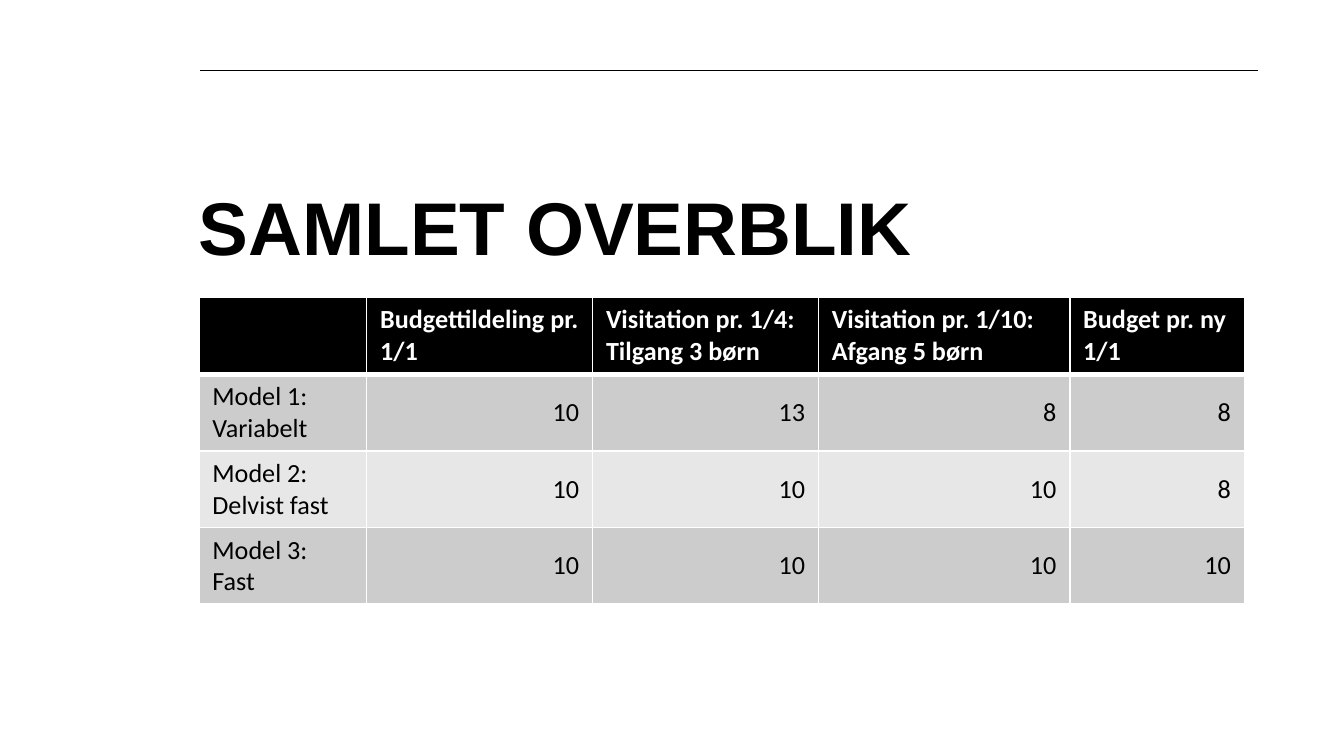
from lxml.etree import SubElement
from pptx import Presentation
from pptx.dml.color import RGBColor
from pptx.enum.shapes import MSO_CONNECTOR
from pptx.enum.text import MSO_ANCHOR, PP_ALIGN
from pptx.oxml.ns import qn
from pptx.util import Cm, Pt

TITLE = "SAMLET OVERBLIK"
HEADER = [
    [],
    ["Budgettildeling pr. 1/1"],
    ["Visitation pr. 1/4:", "Tilgang 3 børn"],
    ["Visitation pr. 1/10:", "Afgang 5 børn"],
    ["Budget pr. ny 1/1"],
]
MODELS = [
    ("Model 1: Variabelt", 10, 13, 8, 8),
    ("Model 2: Delvist fast", 10, 10, 10, 8),
    ("Model 3: Fast", 10, 10, 10, 10),
]
COL_WIDTHS = [3.17, 4.27, 4.27, 4.75, 3.3]
ROW_HEIGHT = 1.45
LEFT, TABLE_TOP = 3.76, 5.62
BLACK, WHITE = "000000", "FFFFFF"
BANDS = ["CCCCCC", "E7E7E7"]


def color(value):
    return RGBColor.from_string(value)


def add_run(p, text, font, size, value, bold):
    r = p.add_run()
    r.text = text
    r.font.name, r.font.size, r.font.bold = font, Pt(size), bold
    r.font.color.rgb = color(value)


def set_borders(cell, top, bottom):
    """White cell borders; top and bottom are widths in points."""
    props = cell._tc.get_or_add_tcPr()
    for tag, width in (("lnL", 1), ("lnR", 1), ("lnT", top), ("lnB", bottom)):
        ln = SubElement(props, qn(f"a:{tag}"), w=str(Pt(width)))
        SubElement(SubElement(ln, qn("a:solidFill")), qn("a:srgbClr"), val=WHITE)


def fill_cell(cell, lines, fill, text_color, bold=False, number=False):
    cell.fill.solid()
    cell.fill.fore_color.rgb = color(fill)
    if number:
        cell.vertical_anchor = MSO_ANCHOR.MIDDLE
    tf = cell.text_frame
    for i, line in enumerate(lines):
        p = tf.add_paragraph() if i else tf.paragraphs[0]
        if number:
            p.alignment = PP_ALIGN.RIGHT
        add_run(p, line, "Calibri", 14, text_color, bold)


prs = Presentation()
prs.slide_width, prs.slide_height = Cm(25.4), Cm(14.29)
s = prs.slides.add_slide(prs.slide_layouts[6])

rule = s.shapes.add_connector(MSO_CONNECTOR.STRAIGHT, Cm(3.78), Cm(1.34), Cm(23.77), Cm(1.34))
rule.line.color.rgb = color(BLACK)
rule.line.width = Pt(0.5)
SubElement(rule._element.spPr, qn("a:effectLst"))

title = s.shapes.add_textbox(Cm(LEFT), Cm(1.96), Cm(20.02), Cm(3.15))
tf = title.text_frame
tf.word_wrap = True
tf.vertical_anchor = MSO_ANCHOR.BOTTOM
tf.margin_left = tf.margin_top = tf.margin_right = tf.margin_bottom = 0
p = tf.paragraphs[0]
p.line_spacing = Pt(40)
add_run(p, TITLE, "Arial", 40, BLACK, True)

row_count = 1 + len(MODELS)
table = s.shapes.add_table(
    row_count, len(COL_WIDTHS), Cm(LEFT), Cm(TABLE_TOP),
    Cm(sum(COL_WIDTHS)), Cm(ROW_HEIGHT * row_count),
).table
for column, width in zip(table.columns, COL_WIDTHS):
    column.width = Cm(width)
for i in range(row_count):
    for j in range(len(COL_WIDTHS)):
        set_borders(table.cell(i, j), 3 if i == 1 else 1, 3 if i == 0 else 1)

for j, lines in enumerate(HEADER):
    fill_cell(table.cell(0, j), lines, BLACK, WHITE, bold=True)
for i, model in enumerate(MODELS):
    for j, value in enumerate(model):
        fill_cell(table.cell(i + 1, j), [str(value)], BANDS[i % 2], BLACK, number=j > 0)

prs.save("out.pptx")
